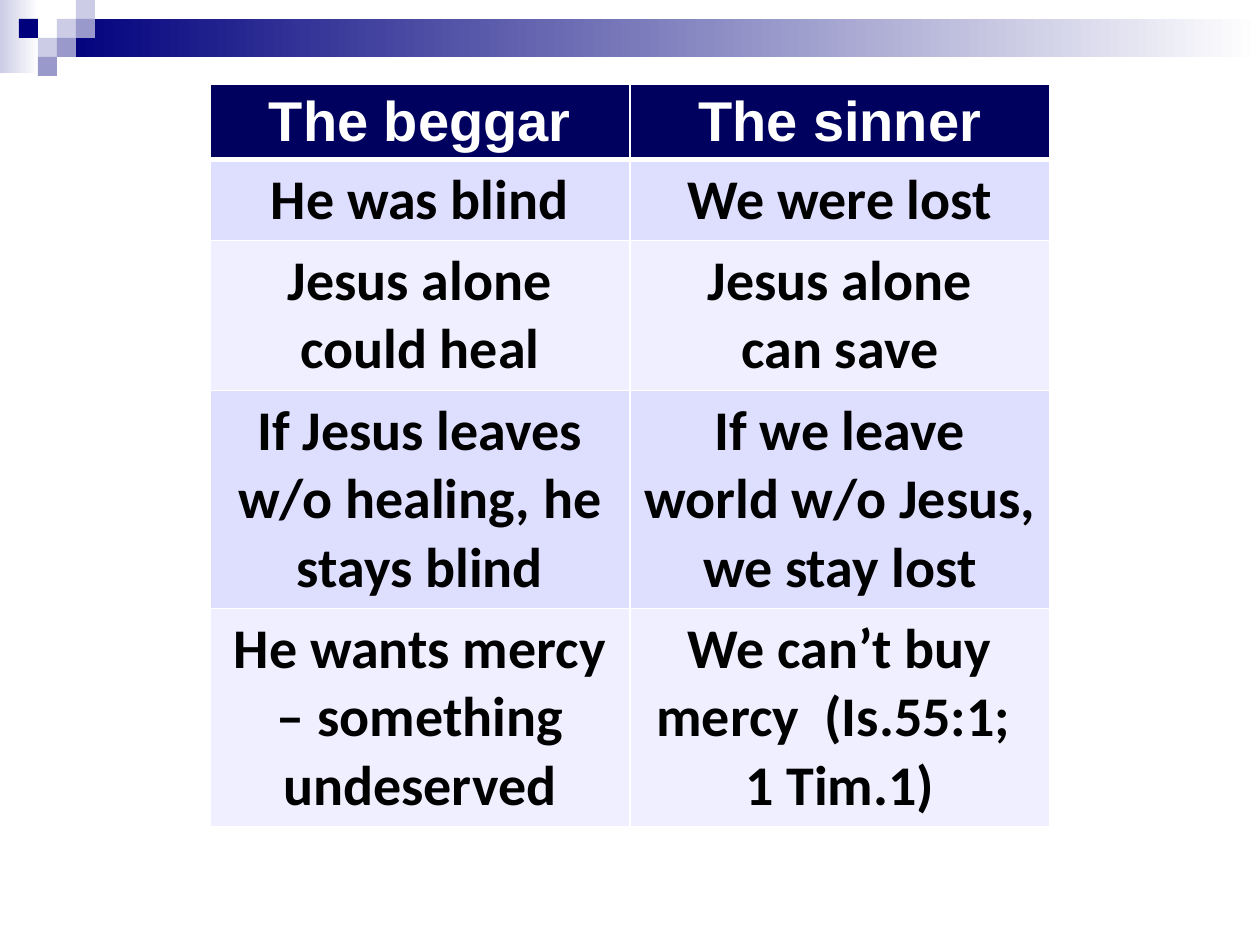
from dataclasses import dataclass

from lxml import etree
from pptx import Presentation
from pptx.dml.color import RGBColor
from pptx.enum.shapes import MSO_SHAPE
from pptx.enum.text import PP_ALIGN
from pptx.oxml.ns import qn
from pptx.util import Emu, Pt

RECTANGLE = MSO_SHAPE.RECTANGLE
CENTER = PP_ALIGN.CENTER
PX = 914400 / 126


@dataclass(frozen=True)
class Theme:
    navy: str = "00007D"
    lavender: str = "CCCCE6"
    violet: str = "9999CC"
    white: str = "FFFFFF"
    black: str = "000000"
    header: str = "00005E"
    bands: tuple = ("DEDEFF", "EFEFFF")
    header_font: str = "Arial"
    body_font: str = "Calibri"
    text_size: int = 32
    rule: int = 1
    header_rule: int = 3


THEME = Theme()

COMPARISON = [
    ("The beggar", "The sinner"),
    ("He was blind", "We were lost"),
    ("Jesus alone could heal", "Jesus alone\ncan save"),
    ("If Jesus leaves w/o healing, he stays blind",
     "If we leave world w/o Jesus, we stay lost"),
    ("He wants mercy – something undeserved",
     "We can’t buy mercy  (Is.55:1; \n1 Tim.1)"),
]
ROW_HEIGHTS = [75, 81, 150, 217, 218]


def px(length):
    return Emu(round(length * PX))


def rgb(color):
    return RGBColor.from_string(color)


def add_block(page, box, *colors):
    block = page.shapes.add_shape(RECTANGLE, *map(px, box))
    block.shadow.inherit = False
    block.line.fill.background()
    if len(colors) == 1:
        block.fill.solid()
        block.fill.fore_color.rgb = rgb(colors[0])
    else:
        block.fill.gradient()
        block.fill.gradient_angle = 0
        for stop, color in zip(block.fill.gradient_stops, colors):
            stop.color.rgb = rgb(color)


def add_banner(page, box):
    left, top, width, height = box
    tile = height // 4
    add_block(page, (left, top, 2 * tile + 1, height - 3), THEME.lavender, THEME.white)
    add_block(page, (left + 3 * tile, top + tile, width - 3 * tile, 2 * tile),
              THEME.navy, THEME.white)
    tiles = [
        (3, 1, THEME.lavender), (4, 0, THEME.lavender), (4, 1, THEME.violet),
        (2, 2, THEME.lavender), (1, 1, THEME.navy), (3, 2, THEME.violet),
        (2, 3, THEME.violet),
    ]
    for column, row, color in tiles:
        add_block(page, (left + column * tile, top + row * tile, tile, tile), color)


def set_borders(cell, top, bottom):
    properties = cell._tc.get_or_add_tcPr()
    widths = {"a:lnL": THEME.rule, "a:lnR": THEME.rule, "a:lnT": top, "a:lnB": bottom}
    for tag, width in widths.items():
        line = etree.SubElement(properties, qn(tag), w=str(Pt(width)))
        fill = etree.SubElement(line, qn("a:solidFill"))
        etree.SubElement(fill, qn("a:srgbClr"), val=THEME.white)


def write_cell(cell, text, font_name, color):
    para = cell.text_frame.paragraphs[0]
    para.alignment = CENTER
    for index, part in enumerate(text.split("\n")):
        if index:
            para.add_line_break()
        span = para.add_run()
        span.text = part
        span.font.name = font_name
        span.font.size = Pt(THEME.text_size)
        span.font.bold = True
        span.font.color.rgb = rgb(color)


def add_comparison(page, box):
    columns = len(COMPARISON[0])
    table = page.shapes.add_table(len(COMPARISON), columns, *map(px, box)).table
    for column in table.columns:
        column.width = px(box[2] // columns)
    for index, (row, texts) in enumerate(zip(table.rows, COMPARISON)):
        row.height = px(ROW_HEIGHTS[index])
        is_header = index == 0
        fill = THEME.header if is_header else THEME.bands[(index - 1) % 2]
        font_name = THEME.header_font if is_header else THEME.body_font
        color = THEME.white if is_header else THEME.black
        top = THEME.header_rule if index == 1 else THEME.rule
        bottom = THEME.header_rule if is_header else THEME.rule
        for cell, text in zip(row.cells, texts):
            set_borders(cell, top, bottom)
            cell.fill.solid()
            cell.fill.fore_color.rgb = rgb(fill)
            write_cell(cell, text, font_name, color)


def main():
    deck = Presentation()
    deck.slide_width, deck.slide_height = px(1260), px(945)
    page = deck.slides.add_slide(deck.slide_layouts[6])
    page.background.fill.solid()
    page.background.fill.fore_color.rgb = rgb(THEME.white)
    add_banner(page, (0, 0, 1260, 76))
    add_comparison(page, (210, 84, 840, sum(ROW_HEIGHTS)))
    deck.save("out.pptx")


if __name__ == "__main__":
    main()
